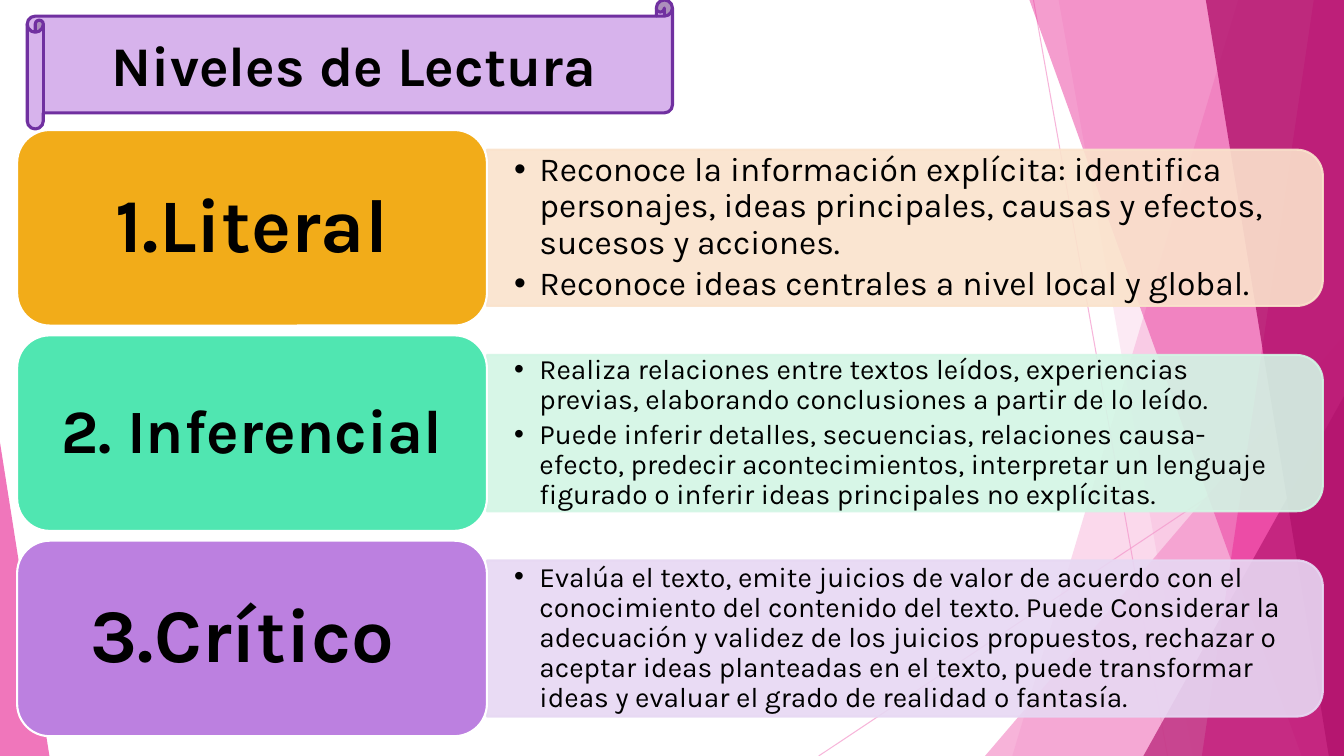
from lxml.etree import SubElement
from pptx import Presentation
from pptx.dml.color import RGBColor
from pptx.enum.shapes import MSO_CONNECTOR, MSO_SHAPE as Preset
from pptx.enum.text import MSO_ANCHOR, PP_ALIGN
from pptx.oxml.ns import qn
from pptx.util import Inches, Pt

TITLE = "Niveles de Lectura"
LEVELS = [
    {"name": "1.Literal", "name_size": 54, "card": "F2AC19", "panel": "FAE3CC", "size": 24,
     "points": ["Reconoce la información explícita: identifica personajes, ideas principales, "
                "causas y efectos, sucesos y acciones.",
                "Reconoce ideas centrales a nivel local y global."]},
    {"name": "2. Inferencial", "name_size": 44, "card": "50E6B1", "panel": "D3F6E5", "size": 20,
     "points": ["Realiza relaciones entre textos leídos, experiencias previas, elaborando "
                "conclusiones a partir de lo leído.",
                "Puede inferir detalles, secuencias, relaciones causa-efecto, predecir "
                "acontecimientos, interpretar un lenguaje figurado o inferir ideas "
                "principales no explícitas."]},
    {"name": "3.Crítico ", "name_size": 54, "card": "BC80E0", "panel": "E7D8F3", "size": 20,
     "points": ["Evalúa el texto, emite juicios de valor de acuerdo con el conocimiento del "
                "contenido del texto. Puede Considerar la adecuación y validez de los juicios "
                "propuestos, rechazar o aceptar ideas planteadas en el texto, puede "
                "transformar ideas y evaluar el grado de realidad o fantasía."]},
]
THEME = {"font": "Karla", "text": "000000", "title_size": 40, "white": "FFFFFF",
         "scroll": "D7B3EC", "scroll_edge": "7030A0",
         "light": "F496CB", "pink": "EB3D9F", "deep": "B2136D"}
WIDTH, HEIGHT = 13.33, 7.5

RAYS = [((10.25, 0), (11.58, HEIGHT)), ((WIDTH, 4.03), (8.12, HEIGHT))]
FACETS = [
    {"band": (12.28, 10.04), "color": "light", "alpha": 36},
    {"band": (10.5, 11.83), "color": "light", "alpha": 20},
    {"triangle": (9.77, 3.33, 3.56, 4.17), "peak": 1, "color": "light", "alpha": 72},
    {"band": (10.21, 12.91), "color": "pink", "alpha": 50},
    {"band": (13.03, 11.92), "color": "pink", "alpha": 70},
    {"band": (11.96, 13.18), "color": "deep", "alpha": 80},
    {"triangle": (11.34, 3.93, 1.99, 3.57), "peak": 1, "color": "deep", "alpha": 66},
    {"triangle": (0, 4.39, 0.49, 3.11), "peak": 0, "color": "pink", "alpha": 70},
]
CARD_LEFT, CARD_TOP, CARD_WIDTH, CARD_HEIGHT, PITCH = 0.17, 1.29, 4.66, 1.94, 2.037
PANEL_WIDTH, PANEL_HEIGHT = 8.29, 1.55
POINTS_WIDTH, POINTS_HEIGHT = 8.21, 1.4

prs = Presentation()
prs.slide_width, prs.slide_height = Inches(WIDTH), Inches(HEIGHT)
slide = prs.slides.add_slide(prs.slide_layouts[6])


def paint(fill, color, alpha=100):
    fill.solid()
    fill.fore_color.rgb = RGBColor.from_string(color)
    if alpha < 100:
        tint = fill._xPr.find(qn("a:solidFill"))[0]
        SubElement(tint, qn("a:alpha"), val=str(alpha * 1000))


def finish(shape, color, alpha=100, edge=None, edge_width=1.5):
    shape.shadow.inherit = False
    paint(shape.fill, color, alpha)
    if edge:
        paint(shape.line.fill, edge, alpha)
        shape.line.width = Pt(edge_width)
    else:
        shape.line.fill.background()


def add_preset(preset, left, top, width, height):
    return slide.shapes.add_shape(preset, *map(Inches, (left, top, width, height)))


def write(shape, lines, size, bold=False, bullets=False, spacing=1, margins=(0.1, 0.05)):
    frame = shape.text_frame
    frame.word_wrap = True
    frame.vertical_anchor = MSO_ANCHOR.MIDDLE
    frame.margin_left = frame.margin_right = Inches(margins[0])
    frame.margin_top = frame.margin_bottom = Inches(margins[1])
    frame.text = "\n".join(lines)
    for paragraph in frame.paragraphs:
        paragraph.alignment = PP_ALIGN.LEFT if bullets else PP_ALIGN.CENTER
        paragraph.line_spacing = spacing
        if bullets:
            paragraph.space_after = Pt(round(size * 0.16, 1))
            props = paragraph._p.get_or_add_pPr()
            props.set("marL", str(Inches(0.25)))
            props.set("indent", str(Inches(-0.25)))
            SubElement(props, qn("a:buFont"), typeface="Arial")
            SubElement(props, qn("a:buChar"), char="•")
        font = paragraph.font
        font.name, font.size, font.bold = THEME["font"], Pt(size), bold
        font.color.rgb = RGBColor.from_string(THEME["text"])


for start, end in RAYS:
    ray = slide.shapes.add_connector(MSO_CONNECTOR.STRAIGHT, *map(Inches, start + end))
    paint(ray.line.fill, THEME["light"], 70)
    ray.line.width = Pt(0.75)
    SubElement(ray._element.spPr, qn("a:effectLst"))

for facet in FACETS:
    if "band" in facet:
        top_x, bottom_x = facet["band"]
        outline = slide.shapes.build_freeform(Inches(top_x), 0)
        corners = [(WIDTH, 0), (WIDTH, HEIGHT), (bottom_x, HEIGHT)]
        outline.add_line_segments([(Inches(x), Inches(y)) for x, y in corners], close=True)
        piece = outline.convert_to_shape()
    else:
        piece = add_preset(Preset.ISOSCELES_TRIANGLE, *facet["triangle"])
        piece.adjustments[0] = facet["peak"]
    finish(piece, THEME[facet["color"]], facet["alpha"])

panel_left = CARD_LEFT + CARD_WIDTH
for row, level in enumerate(LEVELS):
    top = CARD_TOP + row * PITCH
    middle = top + CARD_HEIGHT / 2

    panel = add_preset(Preset.ROUND_2_SAME_RECTANGLE,
                       panel_left + (PANEL_WIDTH - PANEL_HEIGHT) / 2,
                       middle - PANEL_WIDTH / 2, PANEL_HEIGHT, PANEL_WIDTH)
    panel.rotation = 90
    finish(panel, level["panel"], 90, edge=level["panel"])

    points = slide.shapes.add_textbox(*map(Inches, (
        panel_left, middle - POINTS_HEIGHT / 2, POINTS_WIDTH, POINTS_HEIGHT)))
    write(points, level["points"], level["size"], bullets=True, spacing=0.9,
          margins=(0.27, 0.14))

    card = add_preset(Preset.ROUNDED_RECTANGLE, CARD_LEFT, top, CARD_WIDTH, CARD_HEIGHT)
    finish(card, level["card"], edge=THEME["white"])
    write(card, [level["name"]], level["name_size"], bold=True, spacing=0.9,
          margins=(0.25, 0.2))

scroll = add_preset(Preset.HORIZONTAL_SCROLL, 0.27, 0, 6.4, 1.28)
finish(scroll, THEME["scroll"], edge=THEME["scroll_edge"], edge_width=2.25)
write(scroll, [TITLE], THEME["title_size"], bold=True)

prs.save("out.pptx")
